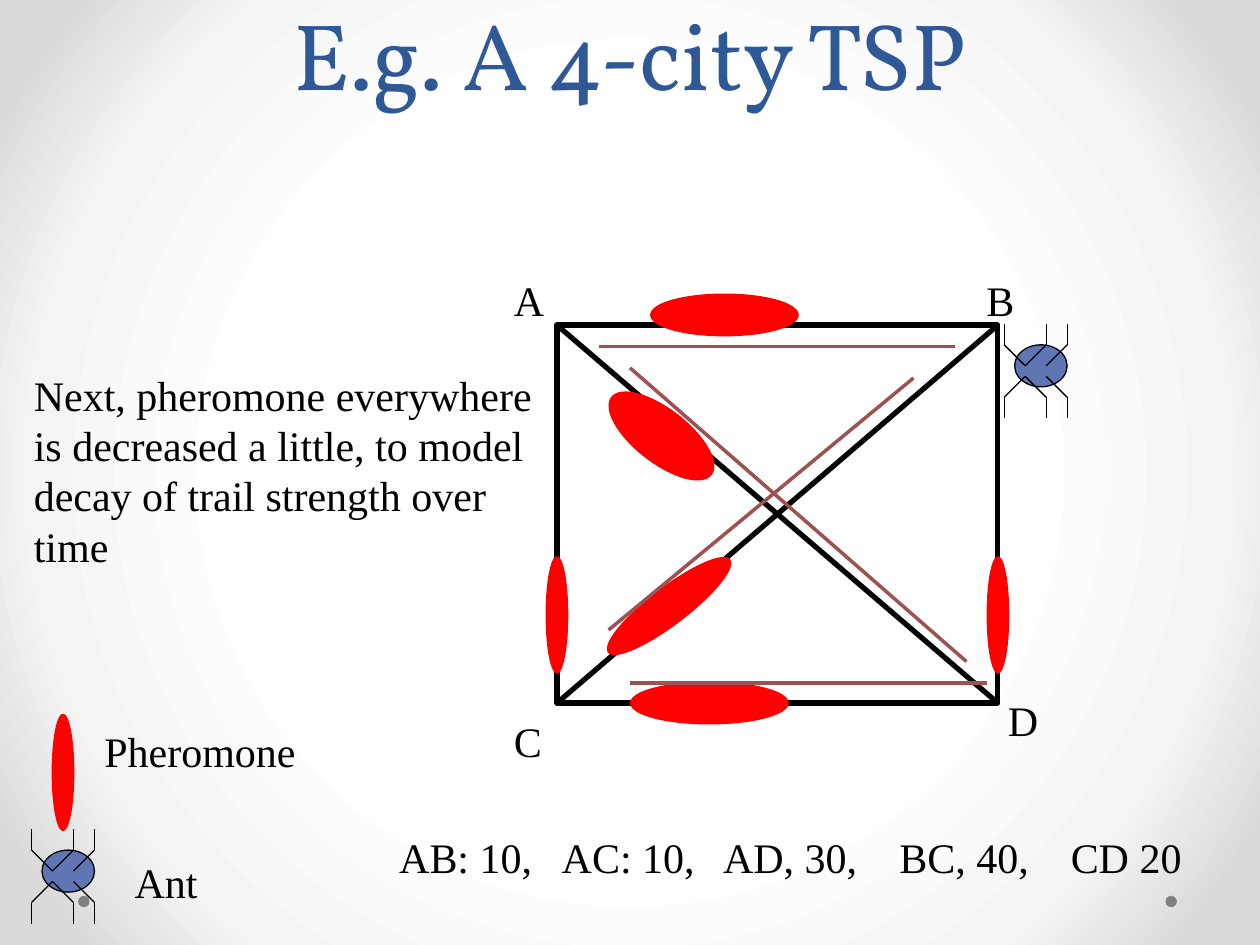
from lxml import etree
from pptx import Presentation
from pptx.dml.color import RGBColor
from pptx.enum.shapes import MSO_CONNECTOR, MSO_SHAPE as SHAPE
from pptx.enum.text import MSO_ANCHOR as ANCHOR, PP_ALIGN as ALIGN
from pptx.oxml import parse_xml
from pptx.oxml.ns import nsdecls, qn
from pptx.util import Inches, Pt

THEME = {
    "title": "2F5897", "ink": "000000", "pheromone": "FF0000", "ant": "6076B4",
    "trail": "9C5252", "dot": "808080",
    "background": [(50, "FFFFFF"), (76, "F4F4F4"), (92, "DADADA")],
    "title_font": "Vollkorn", "body_font": "Times New Roman",
    "title_size": 54, "title_leading": 58, "body_size": 24,
    "thin": 0.75, "medium": 2, "thick": 3,
}

# Content: positions and sizes in inches
TITLE = "E.g. A 4-city TSP"
NOTE = ["Next, pheromone everywhere", "is decreased a little, to model",
        "decay of trail strength over", "time"]
DISTANCES = ["AB: 10,", "AC: 10,", "AD, 30,", "BC, 40,", "CD 20"]
DISTANCE_TABS = [1.29, 2.57, 3.97, 5.33]
LABELS = [  # text, left, top, width
    ("A", 3.98, 2.13, 0.44), ("B", 7.73, 2.13, 0.42),
    ("C", 3.98, 5.63, 0.42), ("D", 7.9, 5.46, 0.44),
    ("Pheromone", 0.73, 5.71, 1.72), ("Ant", 0.97, 6.75, 0.7),
]
MAP_LEFT, MAP_TOP, MAP_WIDTH, MAP_HEIGHT = 4.42, 2.58, 3.5, 3
MAP_RIGHT, MAP_BOTTOM = MAP_LEFT + MAP_WIDTH, MAP_TOP + MAP_HEIGHT
PHEROMONES = [  # centre x, centre y, length, thickness, rotation
    (5.63, 5.58, 1.25, 0.33, 0), (5.75, 2.5, 1.17, 0.33, 0),
    (5.31, 4.81, 1.21, 0.29, 322.7), (5.25, 3.46, 1, 0.42, 37.8),
    (MAP_RIGHT, 4.88, 0.92, 0.17, 90), (MAP_LEFT, 4.88, 0.92, 0.17, 90),
    (0.5, 6.13, 0.92, 0.17, 90),
]
TRAILS = [
    ((4.75, 2.75), (7.58, 2.75)), ((5, 5.42), (7.83, 5.42)),
    ((7.25, 3), (4.83, 5)), ((5, 2.92), (7.67, 5.25)),
]
ANTS = [(7.97, 2.57), (0.25, 6.58)]
ANT_UNIT = 1 / 12
ANT_HEIGHT = 9  # in ant units, as are the legs
UPPER_LEGS = [[(6, 0), (6, 2), (4, 4)], [(4, 0), (4, 2), (2, 4)],
              [(0, 0), (0, 2), (2, 4)]]


def rgb(name):
    return RGBColor.from_string(THEME[name])


def add_shape(shapes, kind, left, top, width, height, fill=None, line=None, weight="thin"):
    shape = shapes.add_shape(kind, *map(Inches, (left, top, width, height)))
    shape.shadow.inherit = False
    if fill:
        shape.fill.solid()
        shape.fill.fore_color.rgb = rgb(fill)
    else:
        shape.fill.background()
    if line:
        shape.line.color.rgb = rgb(line)
        shape.line.width = Pt(THEME[weight])
    else:
        shape.line.fill.background()
    return shape


def add_line(shapes, start, end, color="ink", weight="thin"):
    line = shapes.add_connector(MSO_CONNECTOR.STRAIGHT, *map(Inches, (*start, *end)))
    line.line.color.rgb = rgb(color)
    line.line.width = Pt(THEME[weight])
    etree.SubElement(line._element.spPr, qn("a:effectLst"))


def add_text(shapes, lines, left, top, width, height=0.5, wrap=False, role="body", color="ink"):
    frame = shapes.add_textbox(*map(Inches, (left, top, width, height))).text_frame
    frame.word_wrap = wrap
    frame.text = "\n".join(lines)
    for paragraph in frame.paragraphs:
        paragraph.font.name = THEME[f"{role}_font"]
        paragraph.font.size = Pt(THEME[f"{role}_size"])
        paragraph.font.color.rgb = rgb(color)
    return frame


def add_ant(shapes, left, top):
    def place(x, y):
        return left + x * ANT_UNIT, top + y * ANT_UNIT

    ant = shapes.add_group_shape().shapes
    add_shape(ant, SHAPE.OVAL, *place(1, 2), 5 * ANT_UNIT, 4 * ANT_UNIT, "ant", "ink")
    lower_legs = [[(x, ANT_HEIGHT - y) for x, y in leg] for leg in UPPER_LEGS]
    for leg in UPPER_LEGS + lower_legs:
        for start, end in zip(leg, leg[1:]):
            add_line(ant, place(*start), place(*end))


def paint_background(slide):
    slide.background.fill.solid()
    solid = slide.element.xpath(".//p:bgPr/a:solidFill")[0]
    stops = "".join(f'<a:gs pos="{at * 1000}"><a:srgbClr val="{color}"/></a:gs>'
                    for at, color in THEME["background"])
    solid.getparent().replace(solid, parse_xml(
        f'<a:gradFill {nsdecls("a")} rotWithShape="1"><a:gsLst>{stops}</a:gsLst>'
        '<a:path path="circle"><a:fillToRect l="50000" t="50000" r="50000" b="50000"/>'
        '</a:path></a:gradFill>'))


def set_tabs(paragraph, positions):
    tabs = etree.Element(qn("a:tabLst"))
    for position in positions:
        etree.SubElement(tabs, qn("a:tab"), pos=str(Inches(position)), algn="l")
    paragraph._p.get_or_add_pPr().insert(0, tabs)


def main():
    deck = Presentation()
    deck.slide_width, deck.slide_height = Inches(10), Inches(7.5)
    slide = deck.slides.add_slide(deck.slide_layouts[6])
    shapes = slide.shapes

    # Background and footer dots
    paint_background(slide)
    for left in (9.25, 0.62):
        add_shape(shapes, SHAPE.OVAL, left, 7.11, 0.09, 0.09, "dot")

    # Title
    title = add_text(shapes, [TITLE], 0.75, 0.25, 8.5, 0.67, True, "title", "title")
    title.vertical_anchor = ANCHOR.BOTTOM
    title.paragraphs[0].alignment = ALIGN.CENTER
    title.paragraphs[0].line_spacing = Pt(THEME["title_leading"])

    # City map: four sides and two diagonals
    add_shape(shapes, SHAPE.RECTANGLE, MAP_LEFT, MAP_TOP, MAP_WIDTH, MAP_HEIGHT,
              line="ink", weight="thick")
    for start_y, end_y in ((MAP_TOP, MAP_BOTTOM), (MAP_BOTTOM, MAP_TOP)):
        add_line(shapes, (MAP_LEFT, start_y), (MAP_RIGHT, end_y), weight="thick")

    # Pheromone, ants and trails
    for x, y, length, thickness, rotation in PHEROMONES:
        pheromone = add_shape(shapes, SHAPE.OVAL, x - length / 2, y - thickness / 2,
                              length, thickness, "pheromone", "pheromone")
        pheromone.rotation = rotation
    for left, top in ANTS:
        add_ant(shapes, left, top)
    for start, end in TRAILS:
        add_line(shapes, start, end, "trail", "medium")

    # City names, key, distances and note
    for label, left, top, width in LABELS:
        add_text(shapes, [label], left, top, width)
    distances = add_text(shapes, ["\t".join(DISTANCES)], 3.07, 6.55, 6.6, wrap=True)
    set_tabs(distances.paragraphs[0], DISTANCE_TABS)
    add_text(shapes, NOTE, 0.17, 2.88, 4.15, 1.7)

    deck.save("out.pptx")


if __name__ == "__main__":
    main()
